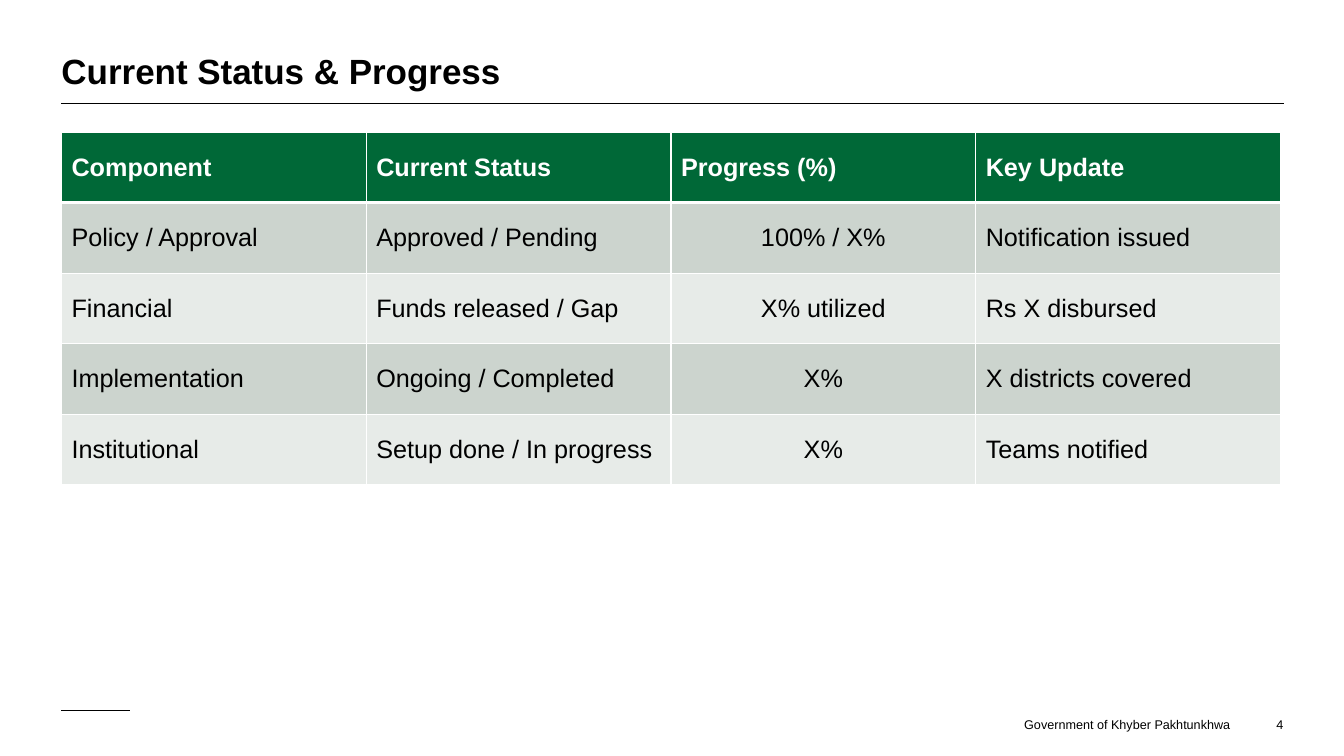
from lxml import etree
from pptx import Presentation
from pptx import util as u
from pptx.dml.color import RGBColor
from pptx.enum import shapes, text
from pptx.oxml import ns

BLACK, WHITE, GREEN = "000000", "FFFFFF", "006837"
BANDS = ("CCD4CE", "E7EBE8")
LEFT, RIGHT = 0.61, 12.73
ALIGN, ANCHOR = text.PP_ALIGN, text.MSO_ANCHOR

STATUS = [
    ["Component", "Current Status", "Progress (%)", "Key Update"],
    ["Policy / Approval", "Approved / Pending", "100% / X%", "Notification issued"],
    ["Financial", "Funds released / Gap", "X% utilized", "Rs X disbursed"],
    ["Implementation", "Ongoing / Completed", "X%", "X districts covered"],
    ["Institutional", "Setup done / In progress", "X%", "Teams notified"],
]
PROGRESS_COL = 2


def rgb(value):
    return RGBColor.from_string(value)


def write(tf, content, size=18, color=BLACK, bold=False, align=ALIGN.LEFT):
    p = tf.paragraphs[0]
    p.alignment = align
    r = p.add_run()
    r.text = content
    r.font.name, r.font.size, r.font.bold = "Arial", u.Pt(size), bold
    r.font.color.rgb = rgb(color)


def set_border(cell, side, width, color=WHITE):
    """Add one cell edge; call in the order L, R, T, B and before the fill."""
    tcPr = cell._tc.get_or_add_tcPr()
    ln = etree.SubElement(tcPr, ns.qn(f"a:ln{side}"), w=str(u.Pt(width)))
    fill = etree.SubElement(ln, ns.qn("a:solidFill"))
    etree.SubElement(fill, ns.qn("a:srgbClr"), val=color)


class Deck:
    """Holds the slide and the shared style of its elements."""

    def __init__(self):
        self.prs = Presentation()
        self.prs.slide_width, self.prs.slide_height = u.Inches(13.33), u.Inches(7.5)
        self.s = self.prs.slides.add_slide(self.prs.slide_layouts[5])

    def frame(self, sp, anchor, wrap=True):
        """Give a shape's text frame no margins and a fixed size."""
        tf = sp.text_frame
        tf.margin_left = tf.margin_right = tf.margin_top = tf.margin_bottom = 0
        tf.auto_size, tf.word_wrap = text.MSO_AUTO_SIZE.NONE, wrap
        tf.vertical_anchor = anchor
        return tf

    def title(self, content, x, y, w, h):
        sp = self.s.shapes.title
        sp.left, sp.top, sp.width, sp.height = map(u.Inches, (x, y, w, h))
        write(self.frame(sp, ANCHOR.BOTTOM), content, size=25, bold=True)

    def footer(self, content, x, w, anchor, align, wrap=True):
        sp = self.s.shapes.add_textbox(*map(u.Inches, (x, 7.11, w, 0.15)))
        write(self.frame(sp, anchor, wrap), content, size=9, align=align)

    def rule(self, y, x1, x2):
        sp = self.s.shapes.add_connector(
            shapes.MSO_CONNECTOR.STRAIGHT, *map(u.Inches, (x1, y, x2, y)))
        sp.line.color.rgb, sp.line.width = rgb(BLACK), u.Pt(0.5)
        etree.SubElement(sp._element.spPr, ns.qn("a:effectLst"))

    def table(self, rows, x, y, w, h):
        table = self.s.shapes.add_table(
            len(rows), len(rows[0]), *map(u.Inches, (x, y, w, h))).table
        for i, row in enumerate(rows):
            header = i == 0
            edges = {"L": 1, "R": 1, "T": 3 if i == 1 else 1, "B": 3 if header else 1}
            for j, content in enumerate(row):
                cell = table.cell(i, j)
                cell.vertical_anchor = ANCHOR.MIDDLE
                for side, width in edges.items():
                    set_border(cell, side, width)
                cell.fill.solid()
                cell.fill.fore_color.rgb = rgb(GREEN if header else BANDS[(i - 1) % 2])
                centred = j == PROGRESS_COL and not header
                write(cell.text_frame, content, bold=header,
                      color=WHITE if header else BLACK,
                      align=ALIGN.CENTER if centred else ALIGN.LEFT)


def main():
    deck = Deck()
    deck.footer("Government of Khyber Pakhtunkhwa", 10.15, 2.06,
                ANCHOR.MIDDLE, ALIGN.CENTER, wrap=False)
    deck.rule(7.05, LEFT, 1.29)
    deck.rule(1.03, LEFT, RIGHT)
    deck.footer("4", 12.37, 0.36, ANCHOR.BOTTOM, ALIGN.RIGHT)
    deck.title("Current Status & Progress", LEFT, 0.11, 11.11, 0.8)
    deck.table(STATUS, LEFT, 1.31, 12.09, 3.5)
    deck.prs.save("out.pptx")


if __name__ == "__main__":
    main()
